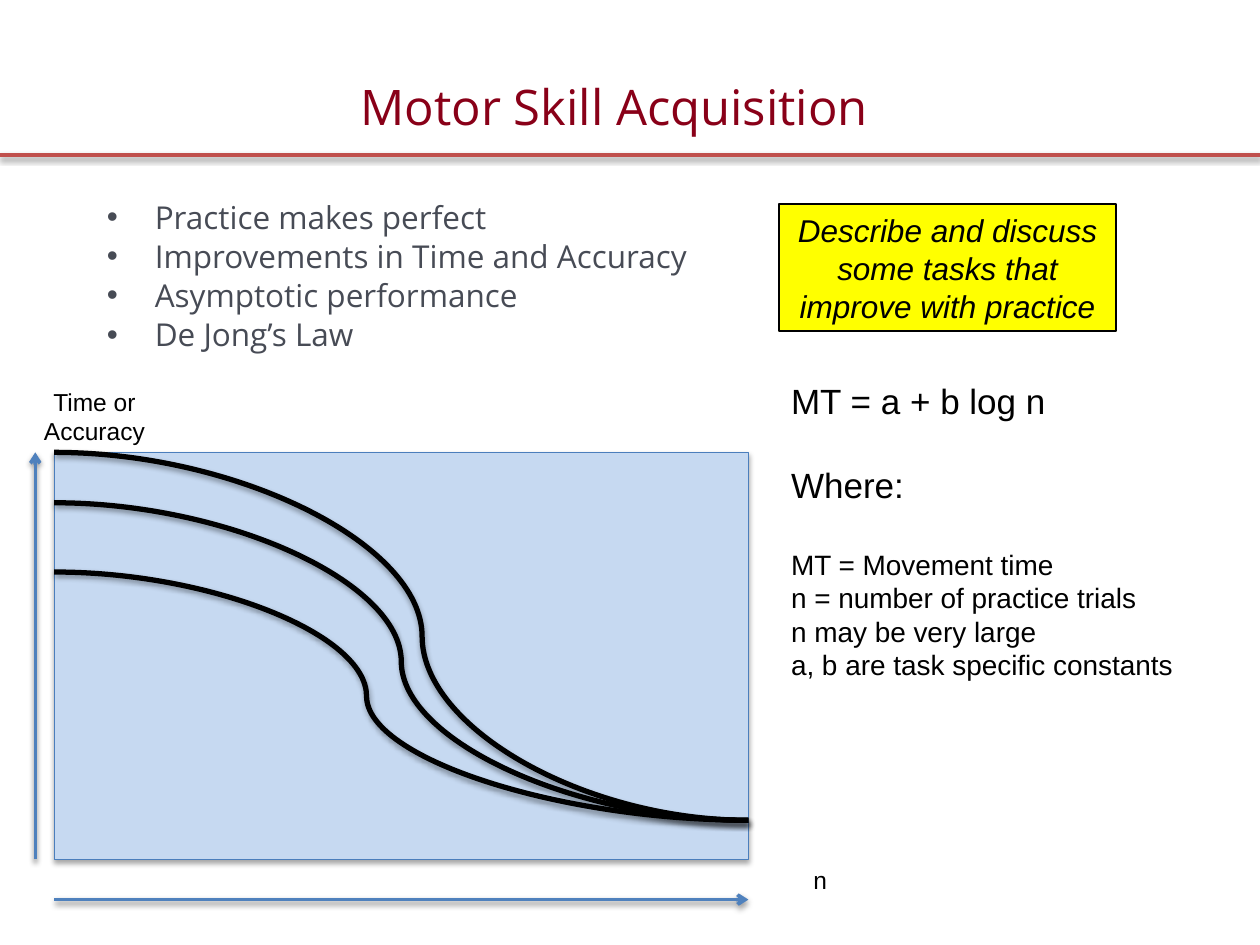
from dataclasses import dataclass
from lxml import etree
from pptx import Presentation
from pptx.dml.color import RGBColor
from pptx.enum.shapes import MSO_CONNECTOR, MSO_SHAPE
from pptx.enum.text import MSO_ANCHOR, PP_ALIGN
from pptx.oxml.ns import qn
from pptx.util import Inches, Pt

STRAIGHT, CURVE = MSO_CONNECTOR.STRAIGHT, MSO_CONNECTOR.CURVE
RECT = MSO_SHAPE.RECTANGLE
LEFT, CENTER = PP_ALIGN.LEFT, PP_ALIGN.CENTER
TOP, MIDDLE = MSO_ANCHOR.TOP, MSO_ANCHOR.MIDDLE
COLS, ROWS = 100, 75
CELL = Inches(0.1)


@dataclass(frozen=True)
class Theme:
    heading_font: str = "Open Sans"
    body_font: str = "Arial"
    title: str = "890018"
    bullet: str = "474B55"
    ink: str = "000000"
    rule: str = "C0504D"
    axis: str = "4F81BD"
    plot: str = "C6D9F1"
    plot_edge: str = "4B7EBC"
    note: str = "FFFF00"
    title_size: int = 28
    formula_size: int = 20
    body_size: int = 18
    detail_size: int = 16
    label_size: int = 14


T = Theme()


def grid(*cells):
    return [round(c * CELL) for c in cells]


def add_node(parent, tag, **attrs):
    return etree.SubElement(parent, qn(tag), {k: str(v) for k, v in attrs.items()})


def set_shadow(s, alpha=None):
    effects = add_node(s._element.spPr, "a:effectLst")
    if alpha:
        shadow = add_node(effects, "a:outerShdw", blurRad=Pt(3.1), dist=Pt(1.7),
                          dir=90 * 60000, rotWithShape=0)
        color = add_node(shadow, "a:srgbClr", val=T.ink)
        add_node(color, "a:alpha", val=alpha * 1000)


def add_line(slide, start, end, color, width, kind=STRAIGHT, arrow=False):
    s = slide.shapes.add_connector(kind, *grid(*start, *end))
    s.line.color.rgb = RGBColor.from_string(color)
    s.line.width = Pt(width)
    if arrow:
        add_node(s.line._get_or_add_ln(), "a:tailEnd", type="arrow")
    set_shadow(s, 38)
    return s


def add_curve(slide, start, end, bend):
    s = add_line(slide, start, end, T.ink, 3, CURVE)
    guides = s._element.spPr.find(qn("a:prstGeom")).get_or_add_avLst()
    add_node(guides, "a:gd", name="adj1", fmla=f"val {round(bend * 100000)}")


def add_box(slide, at, fill, edge, width, alpha=None):
    s = slide.shapes.add_shape(RECT, *grid(*at))
    s.fill.solid()
    s.fill.fore_color.rgb = RGBColor.from_string(fill)
    s.line.color.rgb = RGBColor.from_string(edge)
    s.line.width = Pt(width)
    set_shadow(s, alpha)
    return s


def add_text(slide, at):
    return slide.shapes.add_textbox(*grid(*at))


def add_bullet(p):
    pPr = p._p.get_or_add_pPr()
    pPr.set("marL", str(Inches(0.38)))
    pPr.set("indent", str(-Inches(0.38)))
    add_node(pPr, "a:buFont", typeface=T.body_font)
    add_node(pPr, "a:buChar", char="•")


def write(s, lines, color=T.ink, font=T.body_font, align=CENTER, anchor=TOP,
          bullets=False, italic=False):
    tf = s.text_frame
    tf.word_wrap = True
    tf.vertical_anchor = anchor
    for i, (text, size, gap) in enumerate(lines):
        p = tf.add_paragraph() if i else tf.paragraphs[0]
        p.text = text
        p.alignment = align
        if i:
            p.space_before = Pt(gap)
        if bullets:
            add_bullet(p)
        p.font.name = font
        p.font.size = Pt(size)
        p.font.italic = italic
        p.font.color.rgb = RGBColor.from_string(color)


def add_heading(slide):
    add_line(slide, (0, 12.3), (COLS, 12.3), T.rule, 2)
    write(add_text(slide, (7.5, 5.6, 82.5, 6.7)),
          [("Motor Skill Acquisition", T.title_size, 0)], T.title, T.heading_font)
    points = ["Practice makes perfect", "Improvements in Time and Accuracy",
              "Asymptotic performance", "De Jong’s Law"]
    write(add_text(slide, (7.5, 15.2, 82.5, 14.5)),
          [(point, T.body_size, 0.8) for point in points],
          T.bullet, T.heading_font, LEFT, bullets=True)


def add_learning_curves(slide):
    left, top, width, height = 4.3, 35.9, 55.1, 32.3
    right, bottom = left + width, top + height
    add_box(slide, (left, top, width, height), T.plot, T.plot_edge, 0.75, 35)
    for start, bend in [(39.9, 0.5), (45.4, 0.45), (top, 0.53)]:
        add_curve(slide, (left, start), (right, 65.1), bend)
    add_line(slide, (left, 71.4), (right, 71.4), T.axis, 2, arrow=True)
    add_line(slide, (2.8, bottom), (2.8, top), T.axis, 2, arrow=True)
    write(add_text(slide, (1.8, 30.2, 11.4, 5.7)),
          [("Time or Accuracy", T.label_size, 0)])
    write(add_text(slide, (right, bottom, 11.4, 3.4)), [("n", T.label_size, 0)])


def add_formula(slide):
    write(add_text(slide, (61.8, 29.6, 34.6, 25.2)), [
        ("MT = a + b log n", T.formula_size, 0),
        ("Where:", T.formula_size, 24),
        ("MT = Movement time", T.detail_size, 24),
        ("n = number of practice trials", T.detail_size, 0),
        ("n may be very large", T.detail_size, 0),
        ("a, b are task specific constants", T.detail_size, 0),
    ], align=LEFT)


def add_task(slide):
    s = add_box(slide, (61.8, 16.2, 26.8, 10.1), T.note, T.ink, 1)
    write(s, [("Describe and discuss some tasks that improve with practice",
               T.body_size, 0)], anchor=MIDDLE, italic=True)


def main():
    prs = Presentation()
    prs.slide_width, prs.slide_height = grid(COLS, ROWS)
    slide = prs.slides.add_slide(prs.slide_layouts[6])
    add_heading(slide)
    add_learning_curves(slide)
    add_formula(slide)
    add_task(slide)
    prs.save("out.pptx")


if __name__ == "__main__":
    main()
